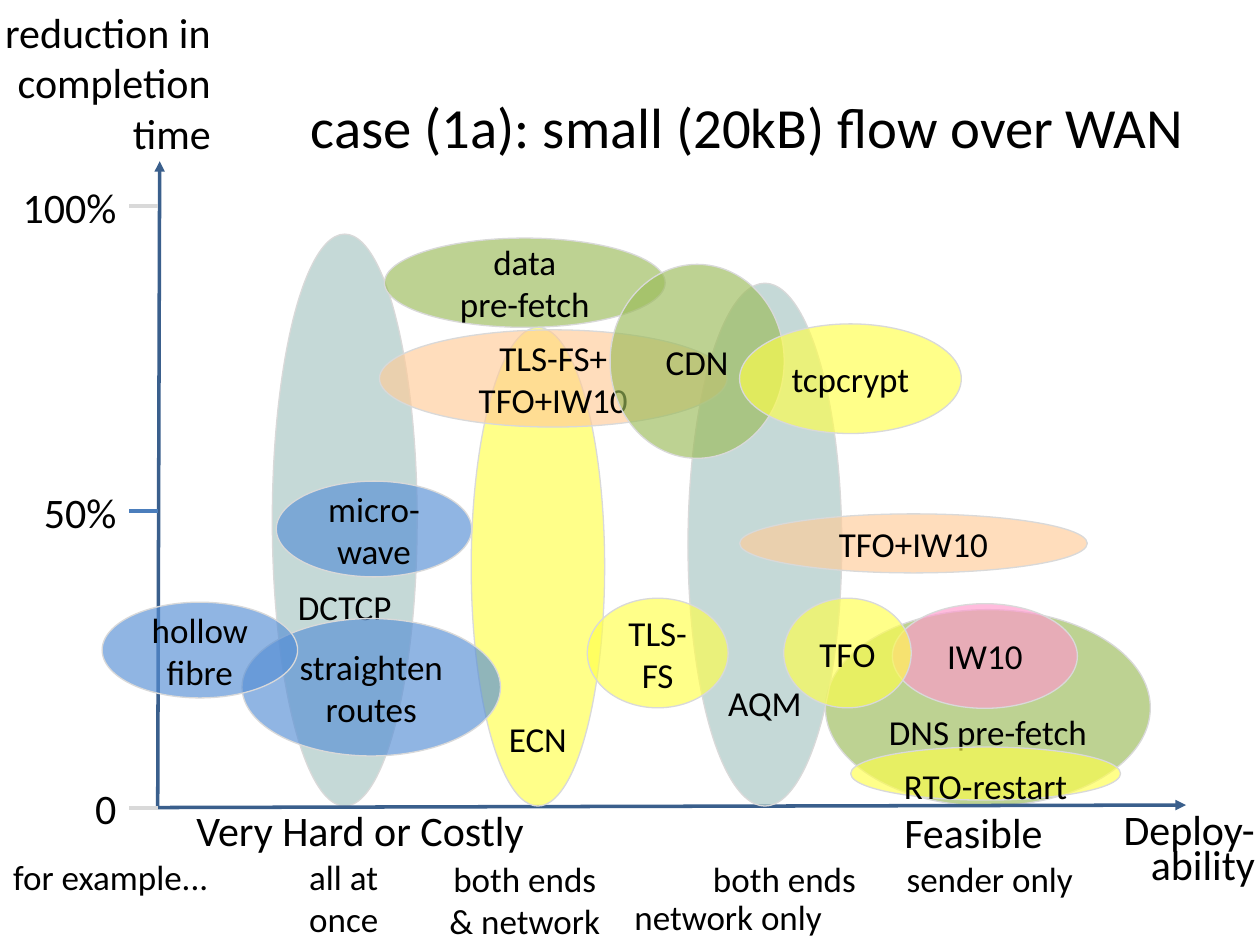
from collections import namedtuple

from lxml.etree import SubElement
from pptx import Presentation
from pptx.dml.color import RGBColor
from pptx.enum.shapes import MSO_CONNECTOR, MSO_SHAPE
from pptx.enum.text import MSO_ANCHOR, PP_ALIGN
from pptx.oxml.ns import qn
from pptx.util import Cm, Pt

BLACK = RGBColor(0x00, 0x00, 0x00)
AXIS_BLUE = RGBColor(0x3A, 0x5F, 0x8C)
TICK_BLUE = RGBColor(0x4B, 0x7E, 0xBC)
GREY = RGBColor(0xD9, 0xD9, 0xD9)
TEAL = RGBColor(0xA6, 0xC6, 0xC3)
GREEN = RGBColor(0x9B, 0xBB, 0x59)
YELLOW = RGBColor(0xFF, 0xFF, 0x4B)
PEACH = RGBColor(0xFF, 0xCC, 0x99)
BLUE = RGBColor(0x55, 0x8E, 0xD5)
PINK = RGBColor(0xFF, 0x99, 0xCC)

Box = namedtuple("Box", "left top width height")

TALL_TECHNIQUES = [
    ("DCTCP", TEAL, Box(2.31, 1.47, 2.92, 11.53), {"top_inset": 3.63, "wrap": False}),
    ("DNS pre-fetch", GREEN, Box(13.46, 9.04, 6.55, 3.96), {"top_inset": 1.1}),
]
TECHNIQUES = [
    ("IW10", PINK, Box(14.81, 8.92, 3.73, 2.11), {}),
    ("data\npre-fetch", GREEN, Box(4.57, 1.55, 5.66, 1.8), {}),
    ("AQM", TEAL, Box(10.69, 2.46, 3.1, 10.54), {"anchor": MSO_ANCHOR.BOTTOM}),
    ("ECN", YELLOW, Box(6.32, 3.35, 2.69, 9.65),
     {"anchor": MSO_ANCHOR.BOTTOM, "bottom_inset": -0.48}),
    ("TLS-FS", YELLOW, Box(8.66, 8.81, 2.84, 2.21), {}),
    ("TLS-FS+\nTFO+IW10", PEACH, Box(4.47, 3.4, 7.01, 1.96), {}),
    ("straighten routes", BLUE, Box(1.7, 9.22, 5.21, 2.77), {}),
    ("hollow fibre", BLUE, Box(-1.12, 8.89, 3.94, 1.93), {}),
    ("micro-\nwave", BLUE, Box(2.39, 6.45, 3.94, 1.93), {}),
    ("TFO+IW10", PEACH, Box(11.73, 7.11, 7.01, 1.19), {}),
    ("CDN", GREEN, Box(9.12, 2.08, 3.51, 3.91), {}),
    ("TFO", YELLOW, Box(12.62, 8.81, 2.57, 2.21), {}),
    ("tcpcrypt", YELLOW, Box(11.73, 3.28, 4.47, 2.21), {}),
    ("RTO-restart", YELLOW, Box(13.97, 11.81, 5.44, 1.07), {"top_inset": 0.61}),
]
TICKS = [("100%", 0.91, 2.44, GREY), ("50%", 7.06, 2.01, TICK_BLUE), ("0", 13.03, 0.97, GREY)]
HEADING = {"size": 24, "align": PP_ALIGN.LEFT}
CAPTIONS = [
    ("Very Hard or Costly", Box(3.71, 0, 7.16, 1.27), HEADING),
    ("Feasible", Box(17.98, 0.05, 3.33, 1.19), HEADING),
    ("Deploy-\nability", Box(22.3, 0.3, 3.25, 1.63),
     {"size": 24, "align": PP_ALIGN.RIGHT, "spacing": Pt(20)}),
    ("for example...", Box(0, 1.04, 4.47, 1.12), {}),
    ("all at\nonce", Box(5.89, 1.04, 2.08, 1.96), {}),
    ("both ends\n& network", Box(8.79, 1.07, 3.58, 1.96), {}),
    ("network only", Box(12.52, 1.85, 4.32, 1.12), {}),
    ("both ends", Box(14.1, 1.07, 3.43, 1.12), {}),
    ("sender only", Box(18.01, 1.07, 3.89, 1.12), {}),
]


def within(outer, inner):
    """Shift a box by the corner of the box that holds it."""
    return inner._replace(left=outer.left + inner.left, top=outer.top + inner.top)


def write_text(shape, text, size=20, align=PP_ALIGN.CENTER, anchor=MSO_ANCHOR.MIDDLE,
               wrap=True, spacing=None, top_inset=0.13, bottom_inset=0.13):
    """Write formatted text into a shape."""
    frame = shape.text_frame
    frame.word_wrap = wrap
    frame.vertical_anchor = anchor
    frame.margin_left = frame.margin_right = Cm(0.25)
    frame.margin_top = Cm(top_inset)
    frame.margin_bottom = Cm(bottom_inset)
    paragraph = frame.paragraphs[0]
    paragraph.text = text
    paragraph.alignment = align
    paragraph.line_spacing = spacing
    for run in paragraph.runs:
        run.font.name = "Calibri"
        run.font.size = Pt(size)
        run.font.color.rgb = BLACK


def add_label(slide, text, box, **text_format):
    """Add a text box that keeps its lines as written."""
    shape = slide.shapes.add_textbox(*map(Cm, box))
    write_text(shape, text, **{"wrap": False, "anchor": MSO_ANCHOR.TOP, **text_format})


def add_techniques(slide, box, techniques):
    """Add translucent ellipses for techniques inside the chart box."""
    for text, color, place, text_format in techniques:
        ellipse = slide.shapes.add_shape(MSO_SHAPE.OVAL, *map(Cm, within(box, place)))
        ellipse.shadow.inherit = False
        ellipse.fill.solid()
        ellipse.fill.fore_color.rgb = color
        color_element = ellipse.fill._xPr.find(qn("a:solidFill"))[0]
        SubElement(color_element, qn("a:alpha"), val="65000")
        ellipse.line.color.rgb = GREY
        ellipse.line.width = Pt(0.75)
        write_text(ellipse, text, **text_format)


def add_axes(slide, box):
    """Add the arrowed axes, the ticks and the vertical axis title."""
    bottom = box.top + box.height
    builder = slide.shapes.build_freeform(Cm(box.left + 0.04), Cm(box.top))
    builder.add_line_segments(
        [(Cm(box.left), Cm(bottom)), (Cm(box.left + box.width), Cm(bottom - 0.05))], close=False)
    axes = builder.convert_to_shape()
    axes.shadow.inherit = False
    axes.fill.background()
    axes.line.color.rgb = AXIS_BLUE
    axes.line.width = Pt(2)
    for end in ("a:headEnd", "a:tailEnd"):
        SubElement(axes.line._get_or_add_ln(), qn(end), type="triangle")
    add_label(slide, "reduction in\ncompletion\ntime", Box(-0.28, 0, 4.78, box.top),
              size=24, align=PP_ALIGN.RIGHT)
    tick_left = box.left - 0.58
    for text, offset, width, color in TICKS:
        height = box.top + offset
        tick = slide.shapes.add_connector(
            MSO_CONNECTOR.STRAIGHT, Cm(box.left), Cm(height), Cm(tick_left), Cm(height))
        tick.line.color.rgb = color
        tick.line.width = Pt(2.25)
        SubElement(tick._element.spPr, qn("a:effectLst"))
        add_label(slide, text, Box(tick_left - width, height - 0.63, width, 1.24),
                  size=24, align=PP_ALIGN.RIGHT)


def add_captions(slide, box):
    """Add the deployability captions below the horizontal axis."""
    for text, place, text_format in CAPTIONS:
        add_label(slide, text, within(box, place), **text_format)


def main():
    """Build and save the slide."""
    presentation = Presentation()
    presentation.slide_width = Cm(25.4)
    presentation.slide_height = Cm(19.05)
    slide = presentation.slides.add_slide(presentation.slide_layouts[6])
    chart = Box(3.18, 3.25, 20.73, 13.03)
    add_label(slide, "case (1a): small (20kB) flow over WAN", Box(6.02, 0.94, 18.69, 3.18),
              size=32.4, align=PP_ALIGN.LEFT, anchor=MSO_ANCHOR.MIDDLE, wrap=True)
    add_techniques(slide, chart, TALL_TECHNIQUES)
    add_axes(slide, chart)
    add_captions(slide, Box(0, 16.08, 25.4, 2.97))
    add_techniques(slide, chart, TECHNIQUES)
    presentation.save("out.pptx")


if __name__ == "__main__":
    main()
